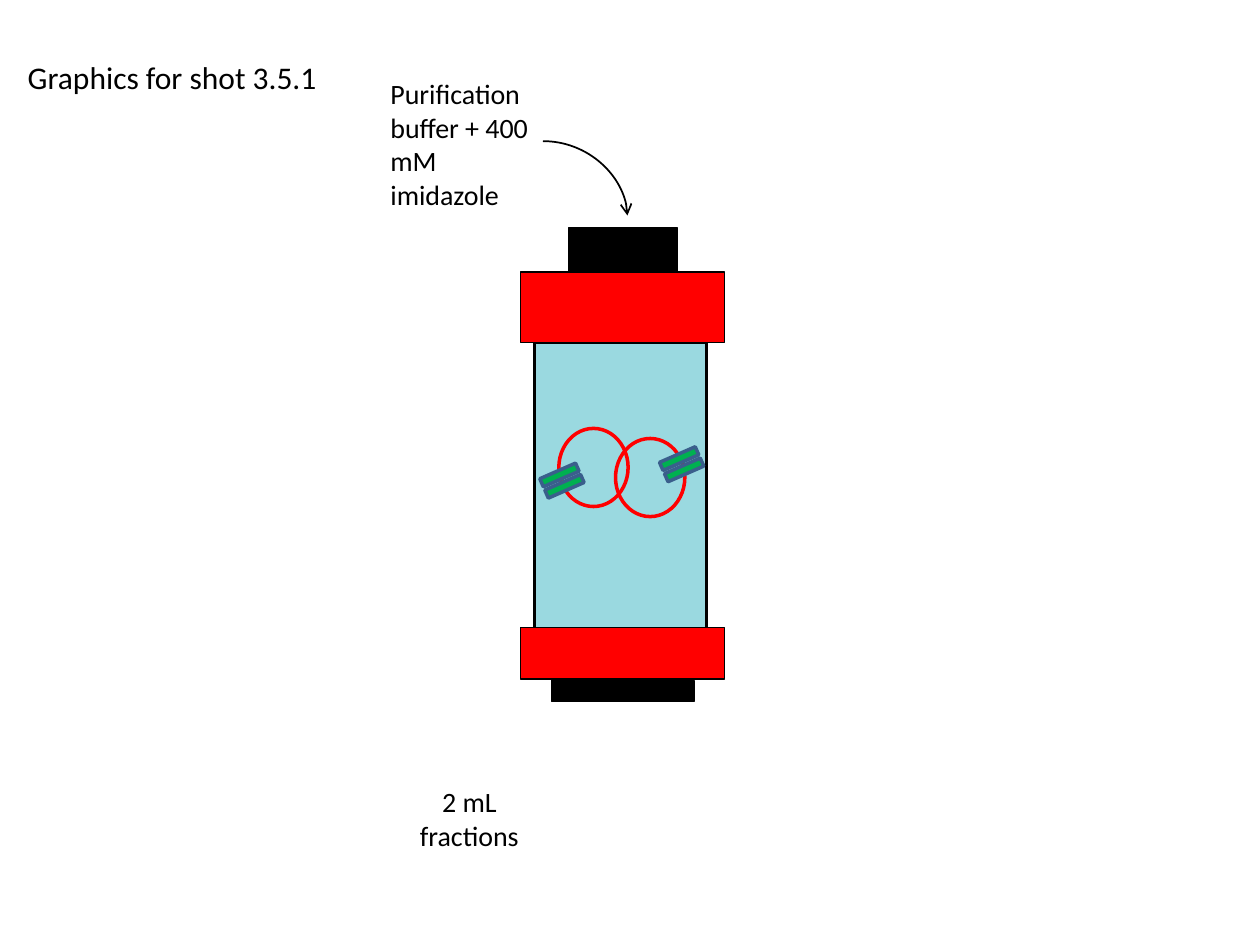
"""Build a slide showing proteins being eluted from a purification column."""
from lxml import etree
from pptx import Presentation, util as u
from pptx.dml.color import RGBColor
from pptx.enum import shapes, text
from pptx.oxml.ns import qn

COLORS = {
    "black": "000000",
    "red": "FF0000",
    "resin": "9AD9E0",
    "tag": "00B050",
    "tag_edge": "3A5F8C",
}
COLUMN_PARTS = [
    ("resin", 4.24, 2.72, 1.37, 2.65, 1.5),
    ("red", 4.13, 2.16, 1.62, 0.56, 0.75),
    ("red", 4.13, 4.98, 1.62, 0.41, 0.75),
    ("black", 4.51, 1.81, 0.87, 0.34, 0.75),
    ("black", 4.38, 5.4, 1.13, 0.17, 0.75),
]
TAG_OFFSETS = [(0.23, -0.15), (0.27, -0.06)]


class Canvas:
    def __init__(self, slide, font="Calibri"):
        self.slide = slide
        self.font = font

    def color(self, name):
        return RGBColor.from_string(COLORS[name])

    def shape(self, parent, kind, left, top, width, height, fill, line, weight):
        shape = parent.shapes.add_shape(
            kind, u.Inches(left), u.Inches(top), u.Inches(width), u.Inches(height))
        shape.shadow.inherit = False
        if fill:
            shape.fill.solid()
            shape.fill.fore_color.rgb = self.color(fill)
        else:
            shape.fill.background()
        shape.line.color.rgb = self.color(line)
        shape.line.width = u.Pt(weight)
        return shape

    def column(self, parts):
        group = self.slide.shapes.add_group_shape()
        for fill, left, top, width, height, weight in parts:
            self.shape(group, shapes.MSO_SHAPE.RECTANGLE, left, top, width, height,
                       fill, "black", weight)

    def protein(self, x, y, side):
        group = self.slide.shapes.add_group_shape()
        width, height = 0.55, 0.62
        self.shape(group, shapes.MSO_SHAPE.OVAL, x - width / 2, y - height / 2,
                   width, height, None, "red", 2)
        width, height = 0.07, 0.31
        for dx, dy in TAG_OFFSETS:
            tag = self.shape(group, shapes.MSO_SHAPE.RECTANGLE,
                             x + side * dx - width / 2, y + side * dy - height / 2,
                             width, height, "tag", "tag_edge", 2)
            tag.rotation = 66.4

    def curved_arrow(self, x1, y1, x2, y2):
        arrow = self.slide.shapes.add_connector(
            shapes.MSO_CONNECTOR.CURVE,
            u.Inches(x1), u.Inches(y1), u.Inches(x2), u.Inches(y2))
        arrow.line.color.rgb = self.color("black")
        arrow.line.width = u.Pt(1)
        properties = arrow._element.spPr
        properties.find(qn("a:prstGeom")).set("prst", "curvedConnector2")
        etree.SubElement(properties.find(qn("a:ln")), qn("a:tailEnd"), type="arrow")
        etree.SubElement(properties, qn("a:effectLst"))

    def set_text(self, box, words, left, top, width, height, size, align):
        box.left, box.top = u.Inches(left), u.Inches(top)
        box.width, box.height = u.Inches(width), u.Inches(height)
        frame = box.text_frame
        frame.text = words
        frame.word_wrap = True
        frame.auto_size = text.MSO_AUTO_SIZE.NONE
        frame.vertical_anchor = text.MSO_ANCHOR.TOP
        para = frame.paragraphs[0]
        para.alignment = align
        font = para.runs[0].font
        font.name, font.size = self.font, u.Pt(size)
        font.color.rgb = self.color("black")

    def title(self, words, *place):
        self.set_text(self.slide.shapes.title, words, *place, 18, text.PP_ALIGN.LEFT)

    def label(self, words, *place, align=text.PP_ALIGN.LEFT):
        box = self.slide.shapes.add_textbox(0, 0, 0, 0)
        self.set_text(box, words, *place, 16, align)


def main():
    deck = Presentation()
    deck.slide_width, deck.slide_height = u.Inches(10), u.Inches(7.5)
    canvas = Canvas(deck.slides.add_slide(deck.slide_layouts.get_by_name("Title Only")))
    canvas.title("Graphics for shot 3.5.1", 0.12, 0.41, 2.7, 0.71)
    canvas.column(COLUMN_PARTS)
    canvas.protein(4.71, 3.71, side=-1)
    canvas.protein(5.16, 3.79, side=1)
    canvas.curved_arrow(4.31, 1.12, 4.98, 1.71)
    canvas.label("Purification buffer + 400 mM imidazole", 3, 0.56, 1.29, 1.18)
    canvas.label("2 mL fractions", 3.18, 6.18, 1.09, 0.64, align=text.PP_ALIGN.CENTER)
    deck.save("out.pptx")


if __name__ == "__main__":
    main()
